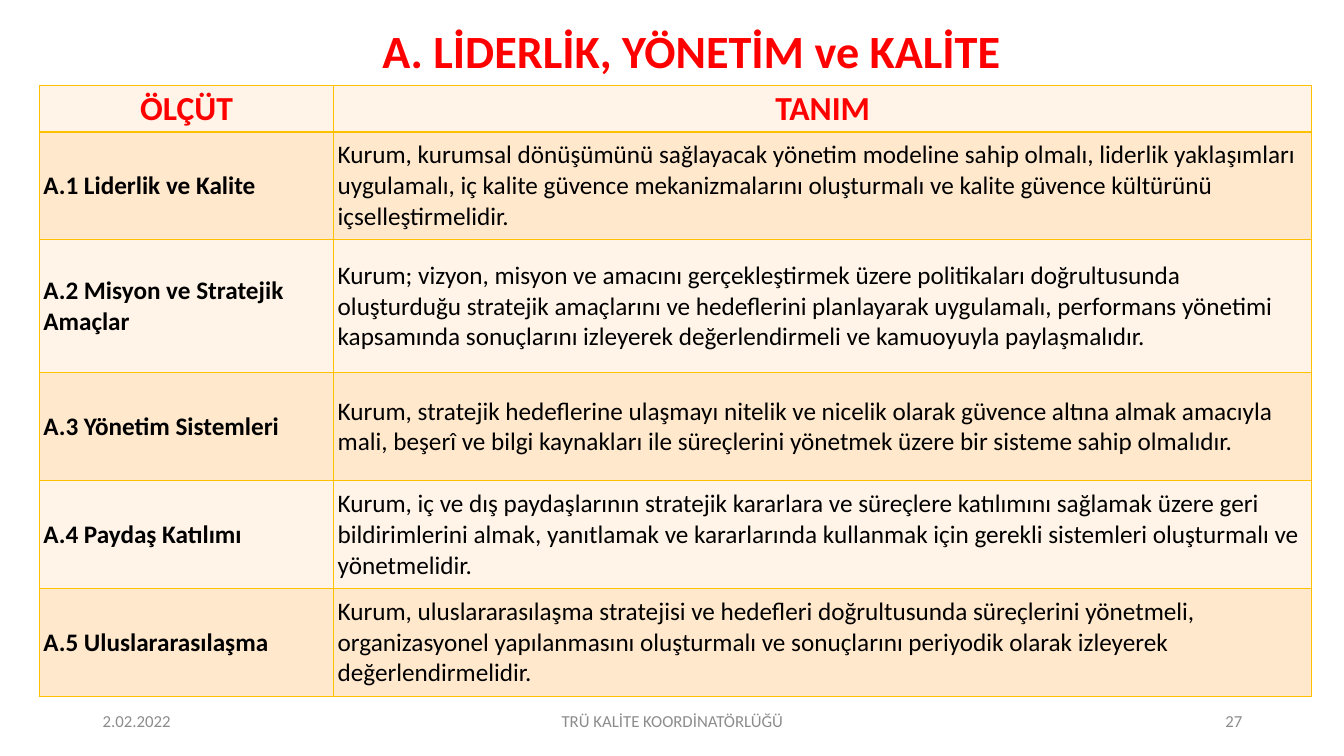
"""Build the slide of leadership, governance and quality criteria."""
from lxml import etree
from pptx import Presentation
from pptx import util as u
from pptx.dml.color import RGBColor
from pptx.enum import text
from pptx.oxml import ns

RED = RGBColor(0xFF, 0x00, 0x00)
BLACK = RGBColor(0x00, 0x00, 0x00)
GREY = RGBColor(0x8C, 0x8C, 0x8C)
GOLD = RGBColor(0xFF, 0xC0, 0x00)
BANDS = [RGBColor(0xFF, 0xF4, 0xE7), RGBColor(0xFF, 0xE8, 0xCC)]
LEFT, CENTER, RIGHT = text.PP_ALIGN.LEFT, text.PP_ALIGN.CENTER, text.PP_ALIGN.RIGHT

FONT = "Calibri"
TITLE = "A. LİDERLİK, YÖNETİM ve KALİTE"
ROWS = [
    ("ÖLÇÜT", "TANIM"),
    ("A.1 Liderlik ve Kalite",
     "Kurum, kurumsal dönüşümünü sağlayacak yönetim modeline sahip olmalı, liderlik "
     "yaklaşımları uygulamalı, iç kalite güvence mekanizmalarını oluşturmalı ve kalite "
     "güvence kültürünü içselleştirmelidir."),
    ("A.2 Misyon ve Stratejik Amaçlar",
     "Kurum; vizyon, misyon ve amacını gerçekleştirmek üzere politikaları doğrultusunda "
     "oluşturduğu stratejik amaçlarını ve hedeflerini planlayarak uygulamalı, performans "
     "yönetimi kapsamında sonuçlarını izleyerek değerlendirmeli ve kamuoyuyla paylaşmalıdır."),
    ("A.3 Yönetim Sistemleri",
     "Kurum, stratejik hedeflerine ulaşmayı nitelik ve nicelik olarak güvence altına almak "
     "amacıyla mali, beşerî ve bilgi kaynakları ile süreçlerini yönetmek üzere bir sisteme "
     "sahip olmalıdır."),
    ("A.4 Paydaş Katılımı",
     "Kurum, iç ve dış paydaşlarının stratejik kararlara ve süreçlere katılımını sağlamak "
     "üzere geri bildirimlerini almak, yanıtlamak ve kararlarında kullanmak için gerekli "
     "sistemleri oluşturmalı ve yönetmelidir."),
    ("A.5 Uluslararasılaşma",
     "Kurum, uluslararasılaşma stratejisi ve hedefleri doğrultusunda süreçlerini yönetmeli, "
     "organizasyonel yapılanmasını oluşturmalı ve sonuçlarını periyodik olarak izleyerek "
     "değerlendirmelidir."),
]
COL_WIDTHS = [2.92, 9.7]
ROW_HEIGHTS = [0.46, 1.07, 1.32, 1.07, 1.07, 1.07]
FOOTER = [
    ("2.02.2022", 0.92, 3, LEFT),
    ("TRÜ KALİTE KOORDİNATÖRLÜĞÜ", 4.42, 4.5, CENTER),
    ("27", 9.42, 3, RIGHT),
]


def style(p, size, color, align, bold=False):
    p.alignment = align
    p.font.name, p.font.size, p.font.bold = FONT, u.Pt(size), bold
    p.font.color.rgb = color


def add_text(slide, words, box, size, color, align, bold=False):
    tf = slide.shapes.add_textbox(*map(u.Inches, box)).text_frame
    tf.word_wrap = True
    tf.vertical_anchor = text.MSO_ANCHOR.MIDDLE
    p = tf.paragraphs[0]
    p.text = words
    style(p, size, color, align, bold)
    return p


def add_borders(cell):
    tc_pr = cell._tc.get_or_add_tcPr()
    for side in ("a:lnL", "a:lnR", "a:lnT", "a:lnB"):
        ln = etree.SubElement(tc_pr, ns.qn(side), w=str(u.Pt(1)))
        fill = etree.SubElement(ln, ns.qn("a:solidFill"))
        etree.SubElement(fill, ns.qn("a:srgbClr"), val=str(GOLD))


def add_criteria(slide):
    box = (0.39, 0.85, sum(COL_WIDTHS), sum(ROW_HEIGHTS))
    table = slide.shapes.add_table(len(ROWS), len(COL_WIDTHS), *map(u.Inches, box)).table
    for col, width in zip(table.columns, COL_WIDTHS):
        col.width = u.Inches(width)
    for i, (row, height) in enumerate(zip(table.rows, ROW_HEIGHTS)):
        row.height = u.Inches(height)
        for j, cell in enumerate(row.cells):
            add_borders(cell)
            cell.fill.solid()
            cell.fill.fore_color.rgb = BANDS[i % 2]
            cell.margin_left = cell.margin_right = u.Inches(0.04)
            cell.margin_top = cell.margin_bottom = 0
            cell.vertical_anchor = text.MSO_ANCHOR.MIDDLE
            cell.text = ROWS[i][j]
            p = cell.text_frame.paragraphs[0]
            if i == 0:
                style(p, 24, RED, CENTER, True)
            else:
                style(p, 18, BLACK, LEFT, j == 0)


def main():
    prs = Presentation()
    prs.slide_width, prs.slide_height = u.Inches(13.33), u.Inches(7.5)
    slide = prs.slides.add_slide(prs.slide_layouts[6])
    title = add_text(slide, TITLE, (1.11, 0.19, 11.5, 0.69), 33, RED, CENTER, True)
    title.line_spacing = 0.9
    add_criteria(slide)
    for words, left, width, align in FOOTER:
        add_text(slide, words, (left, 6.95, width, 0.4), 12, GREY, align)
    prs.save("out.pptx")


if __name__ == "__main__":
    main()
